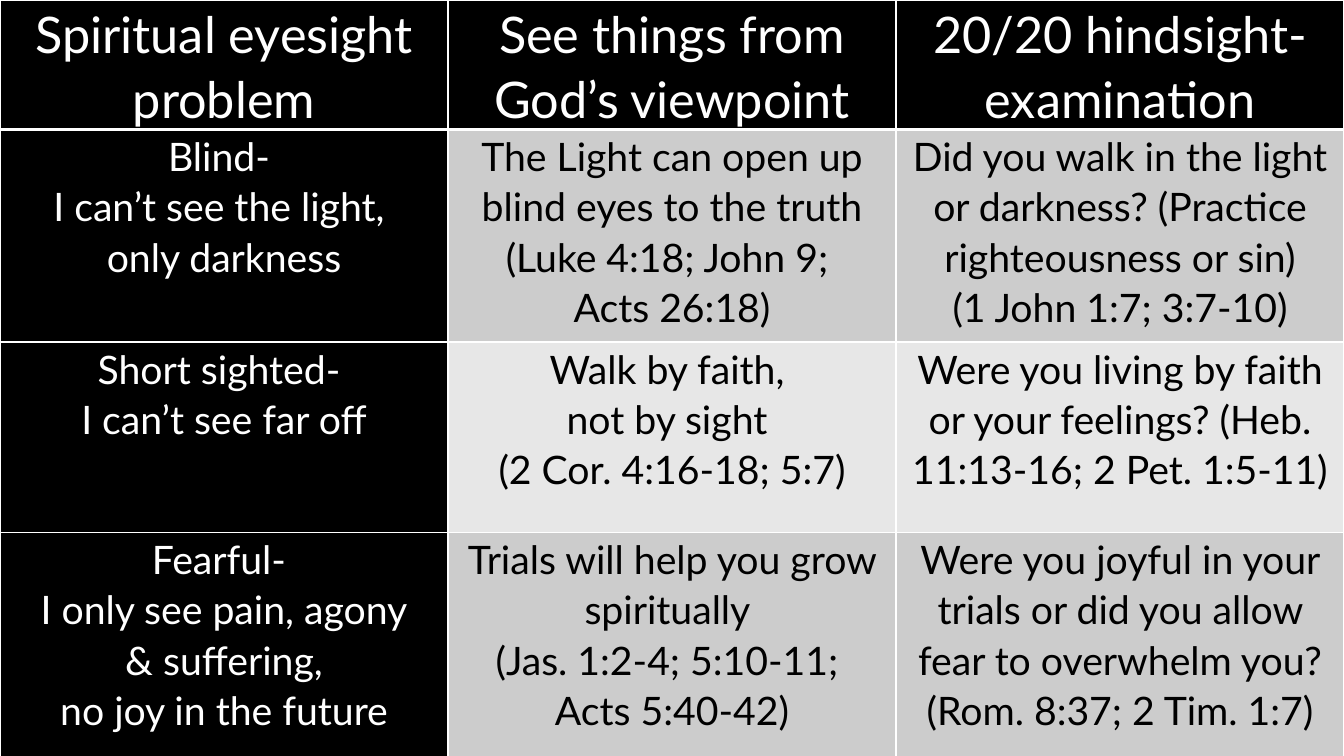
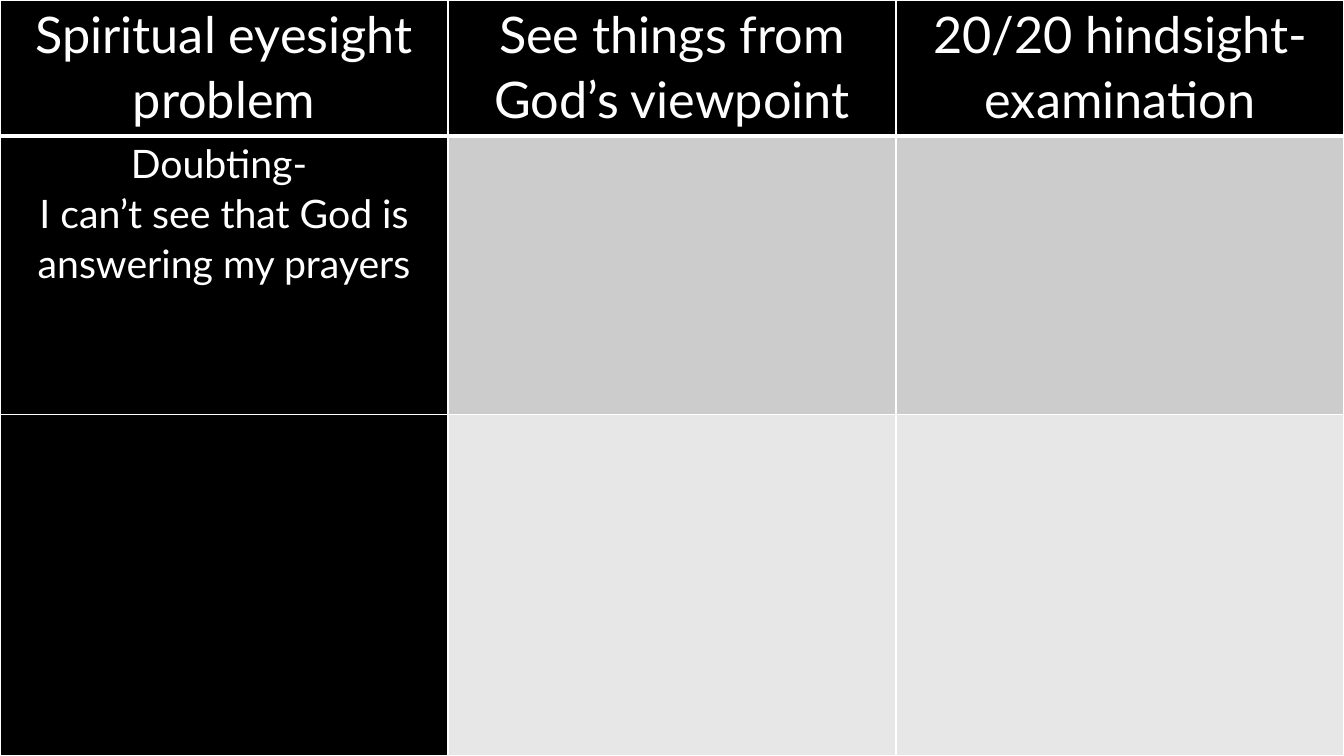
from lxml.etree import SubElement
from pptx import Presentation
from pptx.dml.color import RGBColor
from pptx.enum.text import PP_ALIGN
from pptx.oxml.ns import qn
from pptx.util import Inches, Pt

WIDTH, HEIGHT = 13.33, 7.5
BLACK, WHITE = "000000", "FFFFFF"
BANDS = ["CCCCCC", "E7E7E7"]
HEADINGS = [
    "Spiritual eyesight problem",
    "See things from God’s viewpoint",
    "20/20 hindsight- examination",
]


def rgb(color):
    return RGBColor.from_string(color)


class Deck:
    font = "Lato"
    heading_size = 36
    body_size = 28
    line_spacing = 1.07
    margin = 0.07
    rule = 1
    heading_rule = 3

    def __init__(self):
        self.prs = Presentation()
        self.prs.slide_width = Inches(WIDTH)
        self.prs.slide_height = Inches(HEIGHT)
        self.slide = None

    def add_slide(self):
        self.slide = self.prs.slides.add_slide(self.prs.slide_layouts[6])
        fill = self.slide.background.fill
        fill.solid()
        fill.fore_color.rgb = rgb(BLACK)

    def border(self, cell, side, width):
        tc_pr = cell._tc.get_or_add_tcPr()
        line = SubElement(tc_pr, qn(f"a:ln{side}"), w=str(Pt(width)))
        fill = SubElement(line, qn("a:solidFill"))
        SubElement(fill, qn("a:srgbClr"), val=WHITE)

    def cell(self, cell, text, row, col):
        top = self.heading_rule if row == 1 else self.rule
        bottom = self.heading_rule if row == 0 else self.rule
        for side, width in zip("LRTB", (self.rule, self.rule, top, bottom)):
            self.border(cell, side, width)
        dark = row == 0 or col == 0
        cell.fill.solid()
        cell.fill.fore_color.rgb = rgb(BLACK if dark else BANDS[(row - 1) % 2])
        cell.margin_left = cell.margin_right = Inches(self.margin)
        cell.margin_top = cell.margin_bottom = 0
        tf = cell.text_frame
        tf.text = text
        for p in tf.paragraphs:
            p.alignment = PP_ALIGN.CENTER
            p.line_spacing = self.line_spacing
            for r in p.runs:
                r.font.name = self.font
                r.font.size = Pt(self.body_size if row else self.heading_size)
                r.font.bold = False
                r.font.color.rgb = rgb(WHITE if dark else BLACK)

    def table(self, heights, body):
        rows = [HEADINGS] + body
        frame = self.slide.shapes.add_table(
            len(rows), len(HEADINGS), 0, 0, Inches(WIDTH), Inches(sum(heights)))
        table = frame.table
        table.first_row = table.horz_banding = False
        for column in table.columns:
            column.width = Inches(WIDTH / len(HEADINGS))
        for i, (height, texts) in enumerate(zip(heights, rows)):
            table.rows[i].height = Inches(height)
            for j, text in enumerate(texts):
                self.cell(table.cell(i, j), text, i, j)


def main():
    deck = Deck()

    deck.add_slide()
    deck.table([1.24, 2.11, 1.89, 2.26], [
        ["Blind- \nI can’t see the light, \nonly darkness",
         "The Light can open up blind eyes to the truth (Luke 4:18; John 9; \n"
         "Acts 26:18)",
         "Did you walk in the light or darkness? (Practice righteousness or sin)\n"
         "(1 John 1:7; 3:7-10)"],
        ["Short sighted- \nI can’t see far off",
         "Walk by faith, \nnot by sight \n(2 Cor. 4:16-18; 5:7)",
         "Were you living by faith or your feelings? "
         "(Heb. 11:13-16; 2 Pet. 1:5-11)"],
        ["Fearful- \nI only see pain, agony\n & suffering, \nno joy in the future",
         "Trials will help you grow spiritually \n"
         "(Jas. 1:2-4; 5:10-11; \nActs 5:40-42)",
         "Were you joyful in your trials or did you allow fear to overwhelm you? "
         "(Rom. 8:37; 2 Tim. 1:7)"],
    ])

    deck.add_slide()
    deck.table([1.35, 2.76, 3.39], [
        ["Doubting- \nI can’t see that God is answering my prayers", "", ""],
        ["", "", ""],
    ])

    deck.prs.save("out.pptx")


if __name__ == "__main__":
    main()
